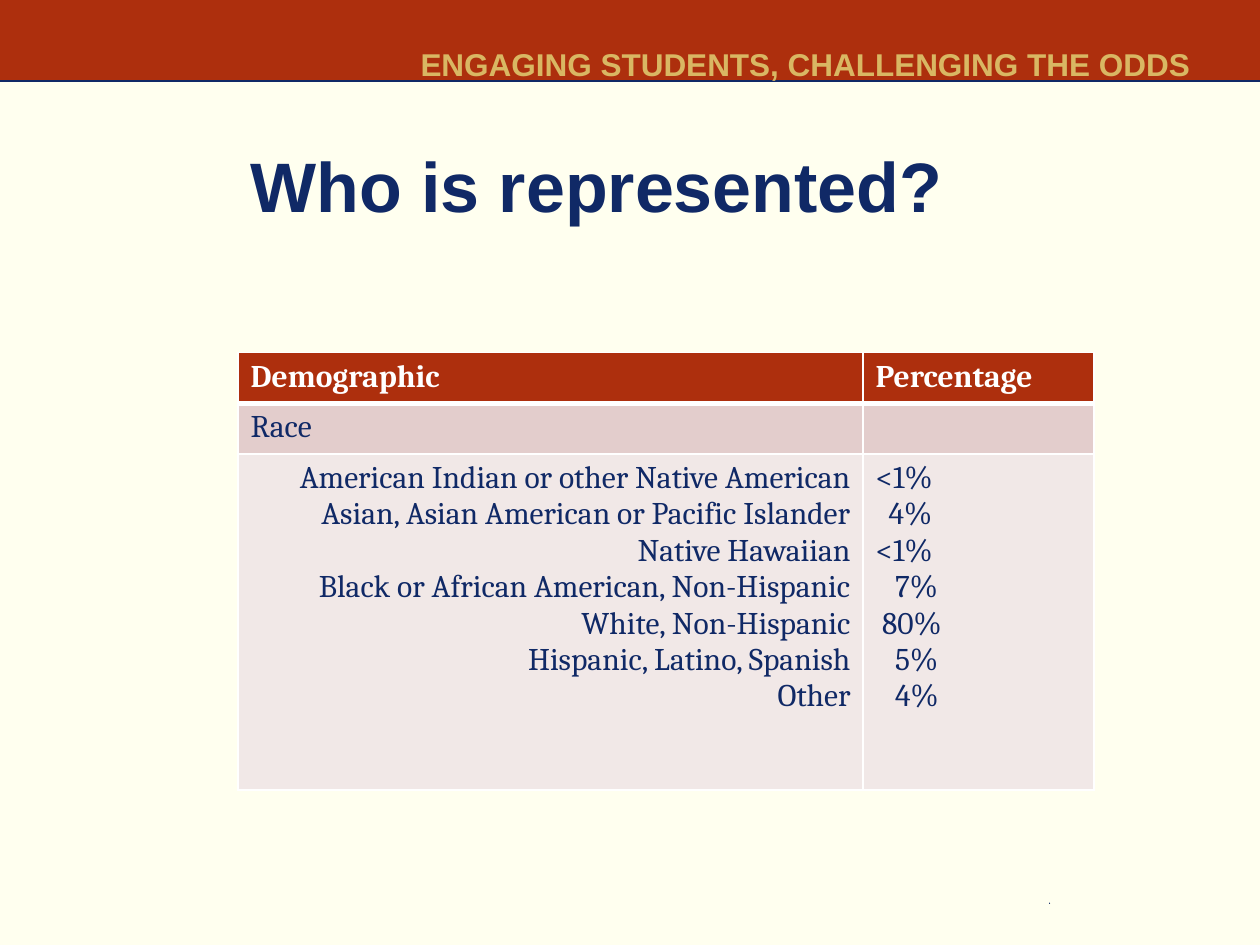
"""Build the slide on who is represented in the survey."""
import pptx
import pptx.dml.color
import pptx.enum.shapes
import pptx.enum.text
import pptx.oxml
import pptx.oxml.ns
import pptx.util

Cm, Pt = pptx.util.Cm, pptx.util.Pt
Shape = pptx.enum.shapes.MSO_SHAPE
Align = pptx.enum.text.PP_ALIGN
NAVY, RUST, CREAM, GOLD, WHITE = "102966", "AD2F0D", "FFFFEF", "D9B763", "FFFFFF"
ROSE, PALE = "E3CDCC", "F1E8E7"
SPACE = 0.13
RACES = [
    ("American Indian or other Native American", "<1%", 0),
    ("Asian, Asian American or Pacific Islander", "4%", 2),
    ("Native Hawaiian", "<1%", 0),
    ("Black or African American, Non-Hispanic", "7%", 3),
    ("White, Non-Hispanic", "80%", 1),
    ("Hispanic, Latino, Spanish", "5%", 3),
    ("Other", "4%", 3),
]


def color(code):
    """Turn a hex string into a colour."""
    return pptx.dml.color.RGBColor.from_string(code)


def assign(item, values):
    """Set each attribute of an item from a dict."""
    for name, value in values.items():
        setattr(item, name, value)


def paint(item, code):
    """Give a shape or cell a solid fill."""
    item.fill.solid()
    item.fill.fore_color.rgb = color(code)


def stroke(item, code, width):
    """Give a shape or connector a solid line."""
    item.line.color.rgb = color(code)
    item.line.width = Pt(width)


def shape(slide, kind, box, code):
    """Add a filled shape with no line or shadow."""
    item = slide.shapes.add_shape(kind, *map(Cm, box))
    item.shadow.inherit = False
    paint(item, code)
    item.line.fill.background()
    return item


def rule(slide, start, end, code):
    """Add a thin straight line."""
    line = slide.shapes.add_connector(
        pptx.enum.shapes.MSO_CONNECTOR.STRAIGHT, *map(Cm, start + end))
    stroke(line, code, 1)
    line._element.spPr.append(pptx.oxml.parse_xml(
        f'<a:effectLst {pptx.oxml.ns.nsdecls("a")}/>'))


def write(frame, lines, look, code, align=Align.LEFT, indents=()):
    """Write one paragraph a line, each with its own left indent."""
    for index, line in enumerate(lines):
        para = frame.paragraphs[0] if index == 0 else frame.add_paragraph()
        para.alignment = align
        if indents and indents[index]:
            para._p.get_or_add_pPr().set("marL", str(Cm(indents[index])))
        run = para.add_run()
        run.text = line
        assign(run.font, look)
        run.font.color.rgb = color(code)


def label(slide, box, frame, text, look, code, align=Align.LEFT):
    """Add a text box holding one line."""
    item = slide.shapes.add_textbox(*map(Cm, box))
    assign(item.text_frame, {"word_wrap": True, **frame})
    write(item.text_frame, [text], look, code, align)
    return item


def border(cell, bottom):
    """Draw white borders round a cell."""
    props = cell._tc.get_or_add_tcPr()
    sides = {"lnL": 1, "lnR": 1, "lnT": 1, "lnB": bottom}
    for index, (side, width) in enumerate(sides.items()):
        props.insert(index, pptx.oxml.parse_xml(
            f'<a:{side} {pptx.oxml.ns.nsdecls("a")} w="{Pt(width)}"><a:solidFill>'
            f'<a:srgbClr val="{WHITE}"/></a:solidFill></a:{side}>'))


def grid(slide):
    """Add the table of races and their shares."""
    widths, heights = (12.6, 4.65), (1.02, 1.02, 6.78)
    table = slide.shapes.add_table(
        3, 2, Cm(4.8), Cm(7.11), Cm(sum(widths)), Cm(sum(heights))).table
    for col, width in zip(table.columns, widths):
        col.width = Cm(width)
    for row, height in zip(table.rows, heights):
        row.height = Cm(height)
    for index, code in enumerate((RUST, ROSE, PALE)):
        for cell in table.rows[index].cells:
            paint(cell, code)
            border(cell, 3 if index == 0 else 1)
    names, shares, gaps = zip(*RACES)
    look = {"name": "Cambria", "size": Pt(18), "bold": False, "italic": False}
    head = {**look, "bold": True}
    write(table.cell(0, 0).text_frame, ["Demographic"], head, WHITE)
    write(table.cell(0, 1).text_frame, ["Percentage"], head, WHITE)
    write(table.cell(1, 0).text_frame, ["Race"], look, NAVY)
    write(table.cell(2, 0).text_frame, names, look, NAVY, Align.RIGHT)
    write(table.cell(2, 1).text_frame, shares, look, NAVY,
          indents=[gap * SPACE for gap in gaps])


def main():
    """Build and save the slide."""
    deck = pptx.Presentation()
    assign(deck, {"slide_width": Cm(25.4), "slide_height": Cm(19.05)})
    slide = deck.slides.add_slide(deck.slide_layouts[6])
    shape(slide, Shape.RECTANGLE, (0, 0, 25.4, 19.05), CREAM)
    shape(slide, Shape.RECTANGLE, (0, 0, 25.4, 1.63), RUST)
    rule(slide, (0, 1.63), (25.4, 1.63), NAVY)
    bold = {"name": "Arial", "bold": True}
    label(slide, (0.74, 0.38, 23.82, 0.91),
          {"margin_top": Cm(0.52), "margin_bottom": 0, "margin_right": Cm(0.56)},
          "ENGAGING STUDENTS, CHALLENGING THE ODDS",
          {**bold, "size": Pt(18)}, GOLD, Align.RIGHT)
    shape(slide, Shape.STAR_5_POINT, (20.98, 18.19, 0.36, 0.36), NAVY)
    title = label(slide, (4.8, 2.67, 19.3, 3.43),
                  {"vertical_anchor": pptx.enum.text.MSO_ANCHOR.BOTTOM,
                   "margin_bottom": Cm(1.54)},
                  "Who is represented?", {**bold, "size": Pt(40)}, NAVY)
    title.text_frame.paragraphs[0].line_spacing = Pt(40)
    patch = shape(slide, Shape.RECTANGLE, (20.9, 18.24, 0.66, 0.33), CREAM)
    stroke(patch, CREAM, 0.75)
    grid(slide)
    deck.save("out.pptx")


if __name__ == "__main__":
    main()
